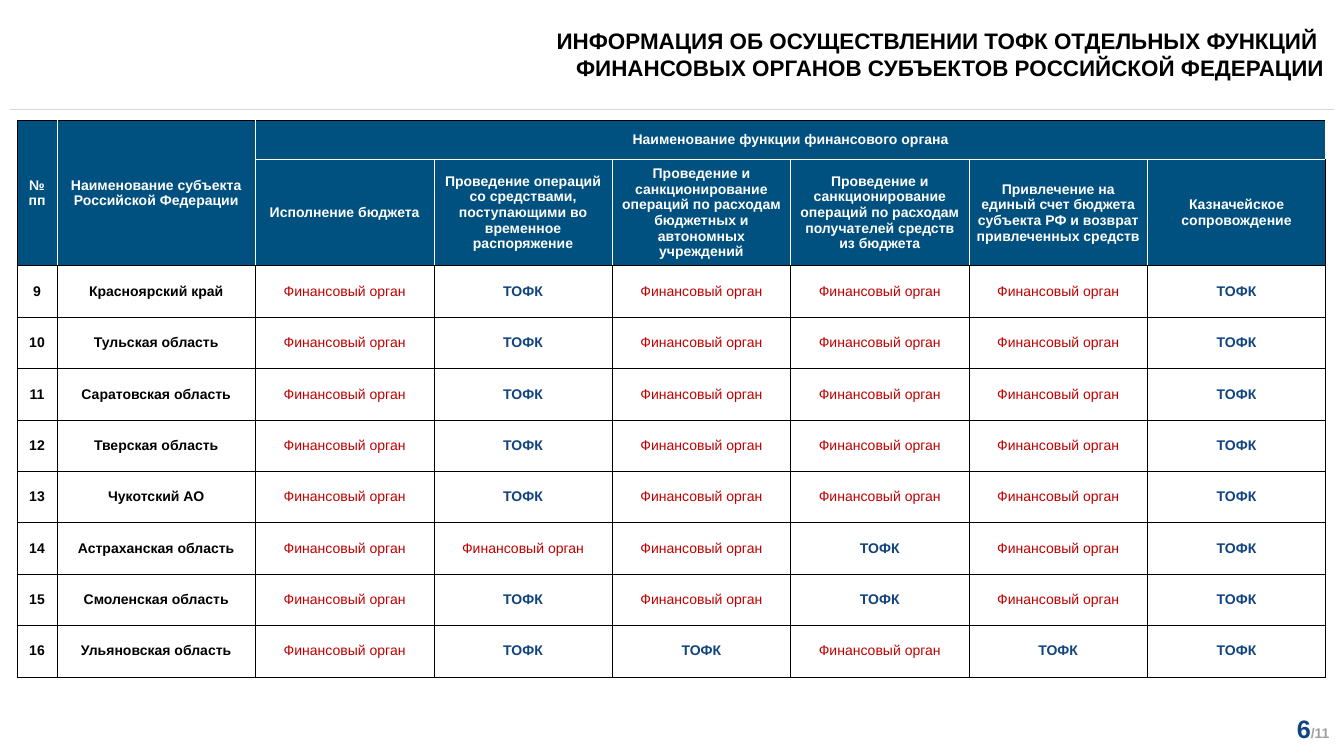
from lxml import etree
from pptx import Presentation
from pptx.dml.color import RGBColor
from pptx.enum.shapes import MSO_CONNECTOR
from pptx.enum.text import MSO_ANCHOR, PP_ALIGN
from pptx.oxml import parse_xml
from pptx.oxml.ns import nsdecls, qn
from pptx.util import Inches, Pt

BLACK, WHITE, NAVY, BLUE, RED = "000000", "FFFFFF", "005180", "11437F", "C00000"


def set_font(font, size, color, bold=True):
    font.name = "Arial"
    font.size = Pt(size)
    font.bold = bold
    font.color.rgb = RGBColor.from_string(color)


def set_border(cell, side, color):
    cell._tc.get_or_add_tcPr().append(parse_xml(
        f'<a:ln{side} {nsdecls("a")} w="12700"><a:solidFill>'
        f'<a:srgbClr val="{color}"/></a:solidFill></a:ln{side}>'))


prs = Presentation()
prs.slide_width = Inches(26.67)
prs.slide_height = Inches(15)
s = prs.slides.add_slide(prs.slide_layouts[6])

# Rule under the title
line = s.shapes.add_connector(MSO_CONNECTOR.STRAIGHT, Inches(0.2), Inches(2.17),
                              Inches(26.47), Inches(2.17))
line.line.color.rgb = RGBColor.from_string("D9D9D9")
line.line.width = Pt(1)
etree.SubElement(line._element.spPr, qn("a:effectLst"))

# Page number
tf = s.shapes.add_textbox(Inches(24.59), Inches(14.1), Inches(1.89), Inches(0.71)).text_frame
tf.word_wrap = True
p = tf.paragraphs[0]
p.alignment = PP_ALIGN.RIGHT
for text, size, color in [("6", 36, BLUE), ("/11", 20, "A0A0A0")]:
    r = p.add_run()
    r.text = text
    set_font(r.font, size, color)

# Table content: T = ТОФК, F = Финансовый орган
functions = [
    "Исполнение бюджета",
    "Проведение операций со средствами, поступающими во временное распоряжение",
    "Проведение и санкционирование операций по расходам бюджетных и автономных учреждений",
    "Проведение и санкционирование операций по расходам получателей средств из бюджета",
    "Привлечение на единый счет бюджета субъекта РФ и возврат привлеченных средств",
    "Казначейское сопровождение",
]
regions = [
    ("Красноярский край", "FTFFFT"),
    ("Тульская область", "FTFFFT"),
    ("Саратовская область", "FTFFFT"),
    ("Тверская область", "FTFFFT"),
    ("Чукотский АО", "FTFFFT"),
    ("Астраханская область", "FFFTFT"),
    ("Смоленская область", "FTFTFT"),
    ("Ульяновская область", "FTTFTT"),
]
bodies = {"T": "ТОФК", "F": "Финансовый орган"}
rows = [
    ["№ пп", "Наименование субъекта Российской Федерации",
     "Наименование функции финансового органа"] + [""] * 5,
    ["", ""] + functions,
]
for number, (region, codes) in enumerate(regions, start=9):
    rows.append([str(number), region] + [bodies[code] for code in codes])

# Table grid
widths = [0.79, 3.94] + [3.54] * 6
heights = [0.78, 1.97] + [1.02] * len(regions)
last = len(widths) - 1
table = s.shapes.add_table(len(rows), len(widths), Inches(0.34), Inches(2.39),
                           Inches(sum(widths)), Inches(sum(heights))).table
table.first_row = False
table.horz_banding = False
for column, width in zip(table.columns, widths):
    column.width = Inches(width)
for row, height in zip(table.rows, heights):
    row.height = Inches(height)
table.cell(0, 0).merge(table.cell(1, 0))
table.cell(0, 1).merge(table.cell(1, 1))
table.cell(0, 2).merge(table.cell(0, last))

# Cells: white lines inside the header, black elsewhere
for i, row in enumerate(rows):
    for j, text in enumerate(row):
        cell = table.cell(i, j)
        header = i < 2
        inner = {"L": header and j > 0, "R": header and j < last,
                 "T": i == 1, "B": i == 0 and j > 1}
        for side, is_inner in inner.items():
            set_border(cell, side, WHITE if is_inner else BLACK)
        if header:
            cell.fill.solid()
            cell.fill.fore_color.rgb = RGBColor.from_string(NAVY)
        else:
            cell.fill.background()
        if cell.is_spanned:
            continue
        cell.vertical_anchor = MSO_ANCHOR.MIDDLE
        p = cell.text_frame.paragraphs[0]
        p.text = text
        p.alignment = PP_ALIGN.CENTER
        if header:
            color = WHITE
        elif j < 2:
            color = BLACK
        else:
            color = BLUE if text == bodies["T"] else RED
        set_font(p.font, 20, color, bold=color != RED)

# Title
tf = s.shapes.add_textbox(0, 0, prs.slide_width, Inches(2.14)).text_frame
tf.word_wrap = True
tf.vertical_anchor = MSO_ANCHOR.MIDDLE
tf.margin_left = tf.margin_top = tf.margin_bottom = 0
tf.margin_right = Inches(0.39)
p = tf.paragraphs[0]
p.text = ("ИНФОРМАЦИЯ ОБ ОСУЩЕСТВЛЕНИИ ТОФК ОТДЕЛЬНЫХ ФУНКЦИЙ \v"
          "ФИНАНСОВЫХ ОРГАНОВ СУБЪЕКТОВ РОССИЙСКОЙ ФЕДЕРАЦИИ")
p.alignment = PP_ALIGN.RIGHT
set_font(p.font, 32, BLACK)

prs.save("out.pptx")
